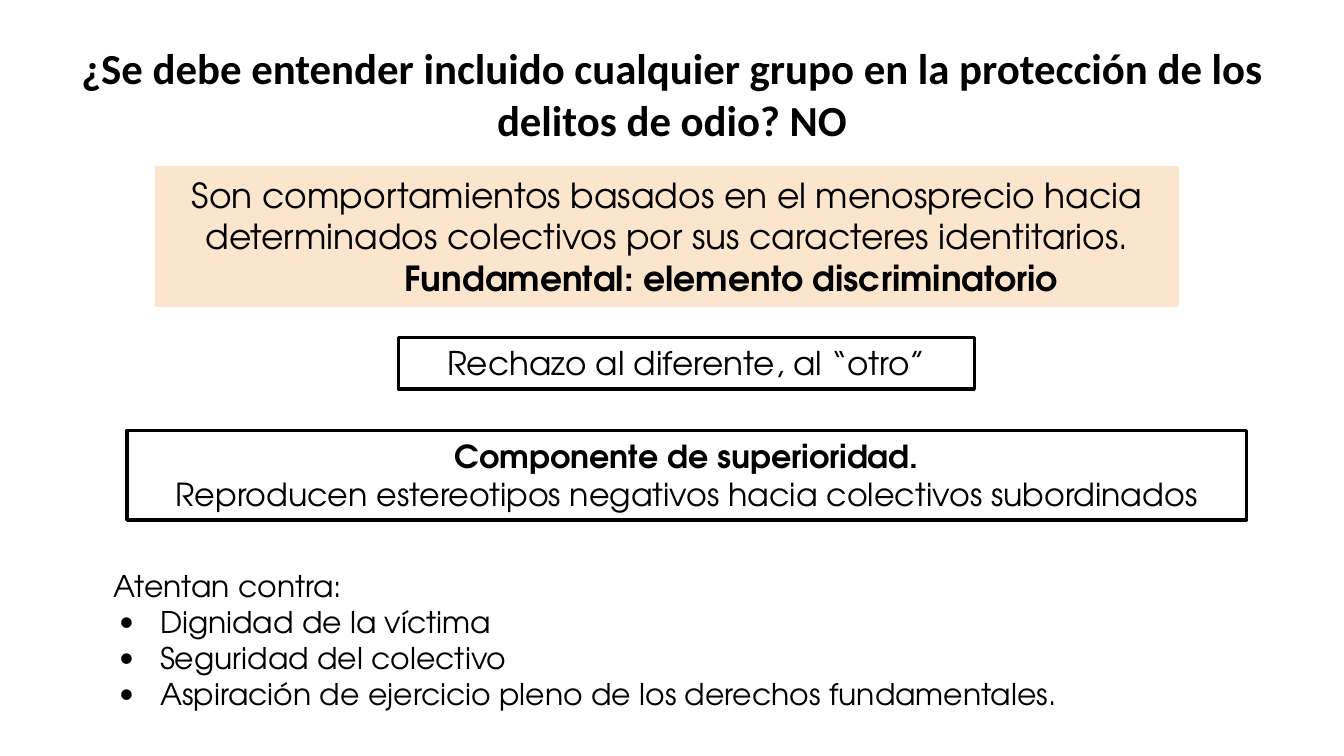
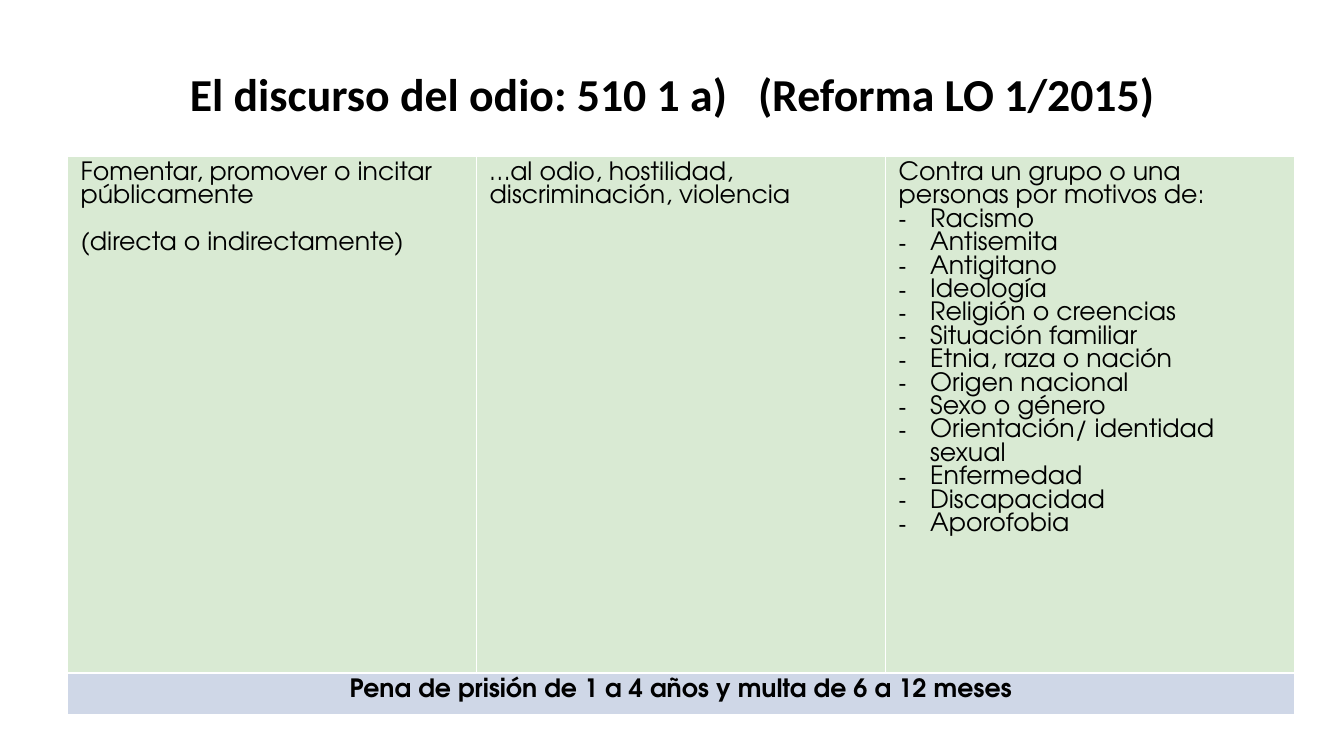
from lxml.etree import SubElement
from pptx import Presentation
from pptx.dml.color import RGBColor
from pptx.enum.shapes import MSO_SHAPE as Shape
from pptx.enum.text import MSO_ANCHOR as Anchor, PP_ALIGN as Align
from pptx.oxml import parse_xml
from pptx.oxml.ns import nsdecls, qn
from pptx.util import Cm, Pt

COLORS = {"ink": "000000", "paper": "FFFFFF", "peach": "FCE5CD",
          "green": "D9EAD3", "blue": "CFD7E7"}
TITLE_FONT, BODY_FONT = "Calibri", "TeX Gyre Adventor"
TITLE_AREA = (2.54, 1.14, 45.72, 4.78)
TITLE_GAP = 22
LINE_WIDTH = 3.67

GROUPS_TITLE = ["¿Se debe entender incluido cualquier grupo en la protección de los delitos de odio? NO"]
SPEECH_TITLE = ["El discurso del odio: 510 1 a)", "(Reforma LO 1/2015)"]

PANELS = [
    {"area": (5.92, 6.35, 38.58, 5.21), "fill": "peach", "line": "peach", "size": 37, "lines": [
        {"text": "Son comportamientos basados en el menosprecio hacia"},
        {"text": "determinados colectivos por sus caracteres identitarios."},
        {"text": "Fundamental: elemento discriminatorio", "bold": True, "indent": 4.87}]},
    {"area": (15.06, 12.75, 21.77, 1.96), "fill": "paper", "line": "ink", "size": 35, "lines": [
        {"text": "Rechazo al diferente, al “otro”"}]},
    {"area": (4.8, 16.28, 42.32, 3.38), "fill": "paper", "line": "ink", "size": 34, "lines": [
        {"text": "Componente de superioridad.", "bold": True},
        {"text": "Reproducen estereotipos negativos hacia colectivos subordinados"}]},
]

HARM_AREA = (3.84, 21.23, 44.93, 5.94)
HARM_INTRO = "Atentan contra:"
HARMS = ["Dignidad de la víctima", "Seguridad del colectivo",
         "Aspiración de ejercicio pleno de los derechos fundamentales."]

CONDUCT = [{"text": "Fomentar, promover o incitar públicamente"},
           {"text": "(directa o indirectamente)", "before": 25}]
EFFECT = [{"text": "…al odio, hostilidad, discriminación, violencia"}]
MOTIVE_INTRO = "Contra un grupo o una personas por motivos de:"
MOTIVES = ["Racismo", "Antisemita", "Antigitano", "Ideología", "Religión o creencias",
           "Situación familiar", "Etnia, raza o nación", "Origen nacional", "Sexo o género",
           "Orientación/ identidad sexual", "Enfermedad", "Discapacidad", "Aporofobia"]
PENALTY = [{"text": "Pena de prisión de 1 a 4 años y multa de 6 a 12 meses", "bold": True}]
TABLE_CORNER = (2.54, 5.92)
COLUMN_WIDTH, ROW_HEIGHTS = 15.46, (19.53, 1.35)
TABLE_SIZE = 27


def color(name):
    return RGBColor.from_string(COLORS[name])


def add_span(para, text, size, bold=False, font=BODY_FONT):
    span = para.add_run()
    span.text = text
    span.font.name, span.font.size, span.font.bold = font, Pt(size), bold
    span.font.color.rgb = color("ink")
    return span


def set_bullet(para, mark, left, hanging):
    props = para._p.get_or_add_pPr()
    props.set("marL", str(Cm(left)))
    props.set("indent", str(-Cm(hanging)))
    tint = SubElement(props, qn("a:buClr"))
    SubElement(tint, qn("a:srgbClr")).set("val", COLORS["ink"])
    SubElement(props, qn("a:buFont")).set("typeface", TITLE_FONT)
    SubElement(props, qn("a:buChar")).set("char", mark)


def write_lines(frame, lines, size, align=Align.LEFT):
    frame.word_wrap = True
    for number, line in enumerate(lines):
        para = frame.add_paragraph() if number else frame.paragraphs[0]
        para.alignment = align
        para.space_before = Pt(line.get("before", 0))
        if "indent" in line:
            para._p.get_or_add_pPr().set("marL", str(Cm(line["indent"])))
        if "bullet" in line:
            set_bullet(para, *line["bullet"])
        add_span(para, line["text"], size, line.get("bold", False))


def bulleted(intro, items, bullet):
    return [{"text": intro}] + [{"text": item, "bullet": bullet} for item in items]


def set_margins(frame):
    frame.margin_left = frame.margin_right = Cm(0.46)
    frame.margin_top = frame.margin_bottom = Cm(0.23)


def add_text_box(page, area):
    box = page.shapes.add_textbox(*map(Cm, area))
    box.text_frame.word_wrap = True
    set_margins(box.text_frame)
    return box.text_frame


def add_page(deck, title, size):
    page = deck.slides.add_slide(deck.slide_layouts[6])
    frame = add_text_box(page, TITLE_AREA)
    frame.vertical_anchor = Anchor.MIDDLE
    para = frame.paragraphs[0]
    para.alignment = Align.CENTER
    for number, part in enumerate(title):
        if number:
            gap = add_span(para, " ", size, True, TITLE_FONT)
            gap.font._element.set("spc", str(TITLE_GAP * 100))
        add_span(para, part, size, True, TITLE_FONT)
    return page


def add_panel(page, panel):
    box = page.shapes.add_shape(Shape.RECTANGLE, *map(Cm, panel["area"]))
    box.shadow.inherit = False
    box.fill.solid()
    box.fill.fore_color.rgb = color(panel["fill"])
    box.line.color.rgb = color(panel["line"])
    box.line.width = Pt(LINE_WIDTH)
    box.text_frame.vertical_anchor = Anchor.TOP
    set_margins(box.text_frame)
    write_lines(box.text_frame, panel["lines"], panel["size"], Align.CENTER)


def style_cell(cell, fill, bottom):
    cell.margin_left = cell.margin_right = Cm(0.51)
    cell.margin_top = cell.margin_bottom = Cm(0.2)
    cell.fill.solid()
    cell.fill.fore_color.rgb = color(fill)
    props = cell._tc.get_or_add_tcPr()
    for place, (side, width) in enumerate([("L", 1), ("R", 1), ("T", 1), ("B", bottom)]):
        props.insert(place, parse_xml(
            f'<a:ln{side} {nsdecls("a")} w="{Pt(width)}"><a:solidFill>'
            f'<a:srgbClr val="{COLORS["paper"]}"/></a:solidFill></a:ln{side}>'))


def add_offence_table(page, columns, footer):
    count = len(columns)
    size = (COLUMN_WIDTH * count, sum(ROW_HEIGHTS))
    table = page.shapes.add_table(2, count, *map(Cm, TABLE_CORNER + size)).table
    table.first_row = table.horz_banding = False
    for column in table.columns:
        column.width = Cm(COLUMN_WIDTH)
    for row, height in zip(table.rows, ROW_HEIGHTS):
        row.height = Cm(height)
    for number, lines in enumerate(columns):
        style_cell(table.cell(0, number), "green", 3)
        style_cell(table.cell(1, number), "blue", 1)
        write_lines(table.cell(0, number).text_frame, lines, TABLE_SIZE)
    table.cell(1, 0).merge(table.cell(1, count - 1))
    write_lines(table.cell(1, 0).text_frame, footer, TABLE_SIZE, Align.CENTER)


def main():
    deck = Presentation()
    deck.slide_width, deck.slide_height = Cm(50.8), Cm(28.58)

    groups = add_page(deck, GROUPS_TITLE, 45.9)
    for panel in PANELS:
        add_panel(groups, panel)
    harms = bulleted(HARM_INTRO, HARMS, ("•", 1.75, 1.55))
    write_lines(add_text_box(groups, HARM_AREA), harms, 32)

    speech = add_page(deck, SPEECH_TITLE, 49)
    motives = bulleted(MOTIVE_INTRO, MOTIVES, ("-", 1.19, 1.19))
    add_offence_table(speech, [CONDUCT, EFFECT, motives], PENALTY)
    deck.save("out.pptx")


if __name__ == "__main__":
    main()
